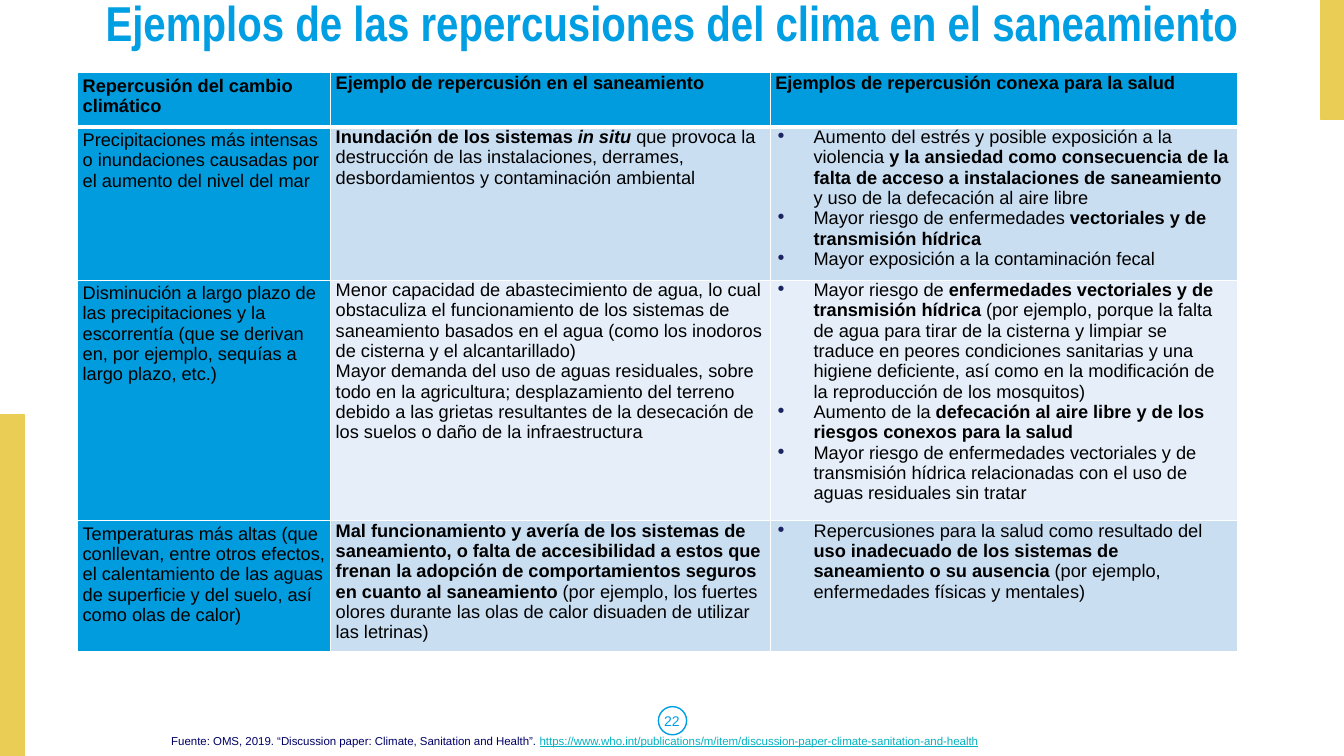
from lxml.etree import SubElement
from pptx import Presentation
from pptx.dml.color import RGBColor as Rgb
from pptx.enum.shapes import MSO_SHAPE as Shape
from pptx.enum.text import MSO_ANCHOR as Anchor, PP_ALIGN as Align
from pptx.oxml.ns import qn
from pptx.util import Inches, Pt

COLORS = {
    "gold": "EACD54", "blue": "009EE3", "head": "009CDE", "band": "CADEF2",
    "pale": "E6EFF9", "white": "FFFFFF", "black": "000000", "mark": "1C245F",
    "navy": "000066", "link": "05B2C1",
}
TITLE = "Ejemplos de las repercusiones del clima en el saneamiento"
SOURCE = "Fuente: OMS, 2019. “Discussion paper: Climate, Sanitation and Health”. "
URL = "https://www.who.int/publications/m/item/discussion-paper-climate-sanitation-and-health"
WIDTHS = [2.51, 4.36, 4.63]
HEIGHTS = [0.54, 1.41, 2.21, 1.21]
ROWS = [
    [
        ["*Repercusión del cambio climático*"],
        ["*Ejemplo de repercusión en el saneamiento*"],
        ["*Ejemplos de repercusión conexa para la salud*"],
    ],
    [
        ["Precipitaciones más intensas o inundaciones causadas por el aumento del nivel del mar"],
        ["*Inundación de los sistemas _in situ_* que provoca la destrucción de las instalaciones, "
         "derrames, desbordamientos y contaminación ambiental"],
        ["Aumento del estrés y posible exposición a la violencia *y la ansiedad como consecuencia "
         "de la falta de acceso a instalaciones de saneamiento* y uso de la defecación al aire libre",
         "Mayor riesgo de enfermedades *vectoriales y de transmisión hídrica*",
         "Mayor exposición a la contaminación fecal"],
    ],
    [
        ["Disminución a largo plazo de las precipitaciones y la escorrentía (que se derivan en, "
         "por ejemplo, sequías a largo plazo, etc.)"],
        ["Menor capacidad de abastecimiento de agua, lo cual obstaculiza el funcionamiento de los "
         "sistemas de saneamiento basados en el agua (como los inodoros de cisterna y el alcantarillado)",
         "Mayor demanda del uso de aguas residuales, sobre todo en la agricultura; desplazamiento del "
         "terreno debido a las grietas resultantes de la desecación de los suelos o daño de la "
         "infraestructura"],
        ["Mayor riesgo de *enfermedades vectoriales y de transmisión hídrica *(por ejemplo, porque la "
         "falta de agua para tirar de la cisterna y limpiar se traduce en peores condiciones sanitarias "
         "y una higiene deficiente, así como en la modificación de la reproducción de los mosquitos)",
         "Aumento de la *defecación al aire libre y de los riesgos conexos para la salud*",
         "Mayor riesgo de enfermedades vectoriales y de transmisión hídrica relacionadas con el uso de "
         "aguas residuales sin tratar"],
    ],
    [
        ["Temperaturas más altas (que conllevan, entre otros efectos, el calentamiento de las aguas de "
         "superficie y del suelo, así como olas de calor)"],
        ["*Mal funcionamiento y avería de los sistemas de saneamiento, o falta de accesibilidad a estos "
         "que frenan la adopción de comportamientos seguros en cuanto al saneamiento* (por ejemplo, los "
         "fuertes olores durante las olas de calor disuaden de utilizar las letrinas)"],
        ["Repercusiones para la salud como resultado del *uso inadecuado de los sistemas de saneamiento "
         "o su ausencia *(por ejemplo, enfermedades físicas y mentales)"],
    ],
]


def tint(name):
    return Rgb.from_string(COLORS[name])


def add_run(para, text, size, color, face="Arial", bold=False, slant=False, under=False):
    run = para.add_run()
    run.text = text
    font = run.font
    font.name, font.size = face, Pt(size)
    font.bold, font.italic, font.underline = bold, slant, under
    font.color.rgb = tint(color)


def add_rich(para, text):
    """Write text in which *stars* mark bold and _bars_ mark italics."""
    for i, part in enumerate(text.split("*")):
        for j, piece in enumerate(part.split("_")):
            if piece:
                add_run(para, piece, 13, "black", bold=i % 2 == 1, slant=j % 2 == 1)


def add_mark(para, kind, box, fill=None):
    shape = para.add_shape(kind, *map(Inches, box))
    shape.shadow.inherit = False
    if fill:
        shape.fill.solid()
        shape.fill.fore_color.rgb = tint(fill)
    else:
        shape.fill.background()
    shape.line.color.rgb = tint(fill or "blue")
    shape.line.width = Pt(1)


def add_text(shapes, box, anchor=Anchor.TOP):
    frame = shapes.add_textbox(*map(Inches, box)).text_frame
    frame.word_wrap = True
    frame.vertical_anchor = anchor
    return frame.paragraphs[0]


def add_bullet(para):
    props = para._p.get_or_add_pPr()
    props.set("marL", str(Inches(0.38)))
    props.set("indent", str(-Inches(0.38)))
    SubElement(SubElement(props, qn("a:buClr")), qn("a:srgbClr"), val=COLORS["mark"])
    SubElement(props, qn("a:buChar"), char="∙")


def add_edges(cell, row):
    props = cell._tc.get_or_add_tcPr()
    sizes = {"L": 1, "R": 1, "T": 3 if row == 1 else 1, "B": 3 if row == 0 else 1}
    for side, size in sizes.items():
        line = SubElement(props, qn(f"a:ln{side}"), w=str(Pt(size)))
        SubElement(SubElement(line, qn("a:solidFill")), qn("a:srgbClr"), val=COLORS["white"])


def fill_cell(cell, row, col, items):
    add_edges(cell, row)
    cell.fill.solid()
    shade = "head" if row == 0 or col == 0 else "band" if row % 2 else "pale"
    cell.fill.fore_color.rgb = tint(shade)
    cell.margin_left = cell.margin_right = Inches(0.05)
    cell.margin_top = cell.margin_bottom = Inches(0 if col else 0.03)
    frame = cell.text_frame
    for i, item in enumerate(items):
        para = frame.add_paragraph() if i else frame.paragraphs[0]
        if row and col == 2:
            add_bullet(para)
        add_rich(para, item)


def add_grid(shapes):
    box = [0.77, 0.72, sum(WIDTHS), sum(HEIGHTS)]
    table = shapes.add_table(len(ROWS), len(WIDTHS), *map(Inches, box)).table
    for col, width in zip(table.columns, WIDTHS):
        col.width = Inches(width)
    for r, cells in enumerate(ROWS):
        table.rows[r].height = Inches(HEIGHTS[r])
        for c, items in enumerate(cells):
            fill_cell(table.cell(r, c), r, c, items)


def set_title(title):
    title.left, title.top, title.width, title.height = map(Inches, [0.92, -0.06, 11.5, 0.78])
    frame = title.text_frame
    frame.word_wrap = True
    frame.vertical_anchor = Anchor.TOP
    para = frame.paragraphs[0]
    para.alignment = Align.CENTER
    para.line_spacing = 0.9
    add_run(para, TITLE, 35, "blue", "Arial Narrow", bold=True)


def main():
    deck = Presentation()
    deck.slide_width, deck.slide_height = Inches(13.33), Inches(7.5)
    shapes = deck.slides.add_slide(deck.slide_layouts[5]).shapes
    add_mark(shapes, Shape.RECTANGLE, [0, 4.11, 0.24, 3.39], "gold")
    add_mark(shapes, Shape.RECTANGLE, [13.1, 0, 0.24, 1.18], "gold")
    add_mark(shapes, Shape.OVAL, [6.53, 7.01, 0.28, 0.28])
    set_title(shapes.title)
    page = add_text(shapes, [0, 6.95, 13.33, 0.4], Anchor.MIDDLE)
    page.alignment = Align.CENTER
    add_run(page, "22", 10, "blue")
    add_grid(shapes)
    note = add_text(shapes, [1.6, 7.23, 10.81, 0.24])
    add_run(note, SOURCE, 8.2, "navy")
    add_run(note, URL, 8.2, "link", under=True)
    deck.save("out.pptx")


if __name__ == "__main__":
    main()
